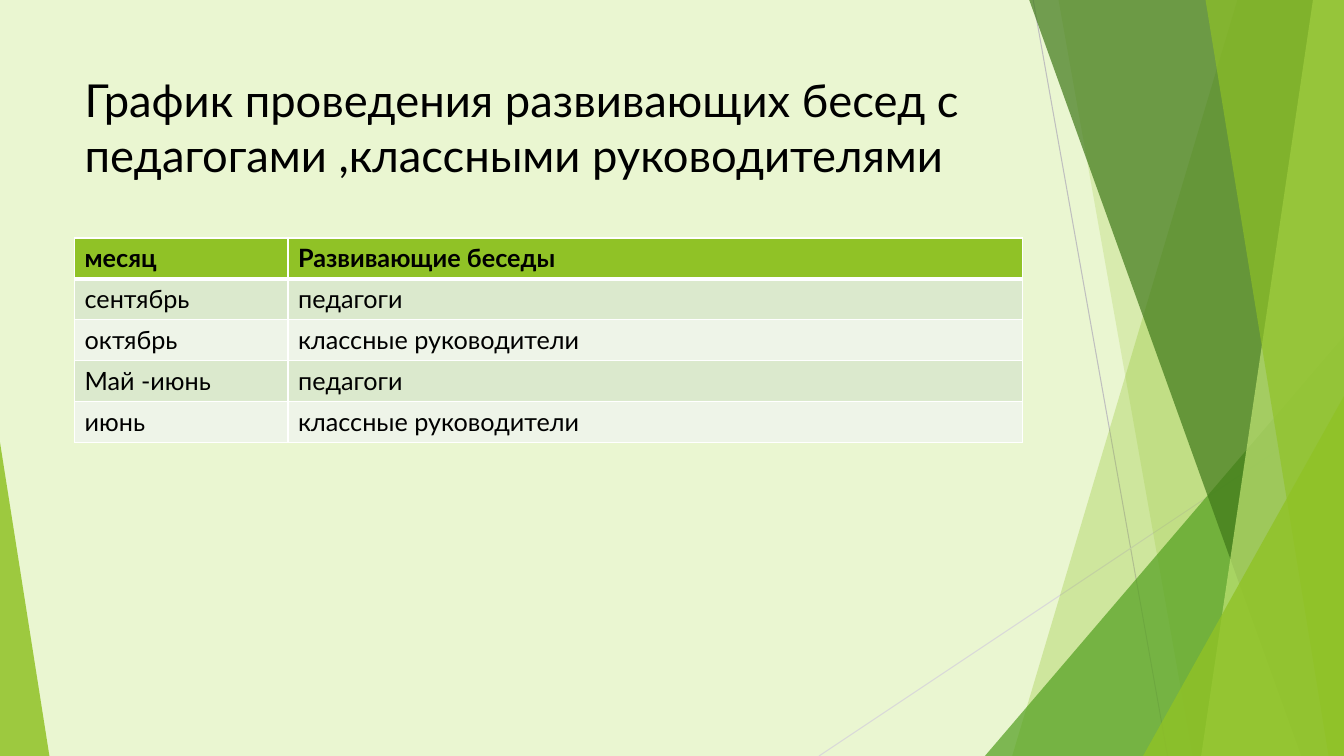
from lxml.etree import SubElement
from pptx import Presentation
from pptx.dml.color import RGBColor
from pptx.enum.shapes import MSO_CONNECTOR, MSO_SHAPE
from pptx.enum.text import MSO_ANCHOR, MSO_AUTO_SIZE, PP_ALIGN
from pptx.oxml import parse_xml
from pptx.oxml.ns import nsdecls, qn
from pptx.util import Pt

WIDTH, HEIGHT = 960, 540
FONT = "Lato"
COLORS = {
    "background": "EAF6D1", "text": "000000", "border": "FFFFFF",
    "gray": "BFBFBF", "light_gray": "D9D9D9",
    "lime": "90C226", "pale_lime": "C0E474", "green": "54A021", "dark_green": "3F7819",
    "odd_row": "DBE9CD", "even_row": "EEF4E8",
}
LEFT, CONTENT_WIDTH = 53.3, 677
MONTH_WIDTH, ROW_HEIGHT = 152.5, 29.2

TITLE = "График проведения развивающих бесед с педагогами ,классными руководителями"
SCHEDULE = [
    ("месяц", "Развивающие беседы"),
    ("сентябрь", "педагоги"),
    ("октябрь", "классные руководители"),
    ("Май -июнь", "педагоги"),
    ("июнь", "классные руководители"),
]
# top x, bottom x, colour, opacity in percent; each reaches the right slide edge
BANDS_BEHIND = [(884, 723, "lime", 30), (756, 852, "lime", 20)]
BANDS_FRONT = [
    (735, 929.5, "dark_green", 70),
    (938, 858, "pale_lime", 70),
    (861, 949, "lime", 65),
]


def rgb(name):
    return RGBColor.from_string(COLORS[name])


def fill_translucent(sp, color, opacity):
    sp.shadow.inherit = False
    sp.line.fill.background()
    sp.fill.solid()
    sp.fill.fore_color.rgb = rgb(color)
    srgb = sp.fill._xPr.find(qn("a:solidFill")).find(qn("a:srgbClr"))
    SubElement(srgb, qn("a:alpha"), val=str(opacity * 1000))


def add_line(slide, start, end, color):
    line = slide.shapes.add_connector(
        MSO_CONNECTOR.STRAIGHT, *(Pt(v) for v in start + end))
    line.line.color.rgb = rgb(color)
    line.line.width = Pt(0.75)
    SubElement(line._element.spPr, qn("a:effectLst"))


def add_band(slide, top_x, bottom_x, color, opacity):
    builder = slide.shapes.build_freeform(Pt(top_x), Pt(-0.6))
    corners = [(WIDTH, -0.6), (WIDTH, HEIGHT), (bottom_x, HEIGHT)]
    builder.add_line_segments([(Pt(x), Pt(y)) for x, y in corners], close=True)
    fill_translucent(builder.convert_to_shape(), color, opacity)


def add_corner(slide, left, top, width, apex, color, opacity):
    """Triangle standing on the bottom edge, apex 0 at left or 1 at right."""
    sp = slide.shapes.add_shape(
        MSO_SHAPE.ISOSCELES_TRIANGLE, Pt(left), Pt(top), Pt(width), Pt(HEIGHT - top))
    sp.adjustments[0] = apex
    fill_translucent(sp, color, opacity)


def format_text(tf, size, bold=False):
    for p in tf.paragraphs:
        p.alignment = PP_ALIGN.LEFT
        for r in p.runs:
            r.font.name = FONT
            r.font.size = Pt(size)
            r.font.bold = bold
            r.font.color.rgb = rgb("text")


def set_title(slide):
    title = slide.shapes.title
    title.left, title.top = Pt(LEFT), Pt(48.2)
    title.width, title.height = Pt(CONTENT_WIDTH), Pt(103.7)
    tf = title.text_frame
    tf.text = TITLE
    tf.word_wrap = True
    tf.auto_size = MSO_AUTO_SIZE.NONE
    tf.vertical_anchor = MSO_ANCHOR.TOP
    format_text(tf, 32.4)
    slide.shapes._spTree.append(title._element)


def set_borders(cell, top, bottom):
    widths = {"lnL": 1, "lnR": 1, "lnT": top, "lnB": bottom}
    tc_pr = cell._tc.get_or_add_tcPr()
    for i, (side, width) in enumerate(widths.items()):
        tc_pr.insert(i, parse_xml(
            f'<a:{side} {nsdecls("a")} w="{Pt(width)}"><a:solidFill>'
            f'<a:srgbClr val="{COLORS["border"]}"/></a:solidFill></a:{side}>'))


def add_schedule(slide):
    rows = len(SCHEDULE)
    table = slide.shapes.add_table(
        rows, 2, Pt(LEFT), Pt(170), Pt(CONTENT_WIDTH), Pt(ROW_HEIGHT * rows)).table
    table.columns[0].width = Pt(MONTH_WIDTH)
    table.columns[1].width = Pt(CONTENT_WIDTH - MONTH_WIDTH)
    for i, texts in enumerate(SCHEDULE):
        table.rows[i].height = Pt(ROW_HEIGHT)
        color = "lime" if i == 0 else "odd_row" if i % 2 else "even_row"
        for j, text in enumerate(texts):
            cell = table.cell(i, j)
            cell.text_frame.text = text
            format_text(cell.text_frame, 18, bold=i == 0)
            cell.fill.solid()
            cell.fill.fore_color.rgb = rgb(color)
            set_borders(cell, top=3 if i == 1 else 1, bottom=3 if i == 0 else 1)


def add_decoration(slide):
    add_line(slide, (738, 0), (834, HEIGHT), "gray")
    add_line(slide, (WIDTH, 290), (585, HEIGHT), "light_gray")
    for band in BANDS_BEHIND:
        add_band(slide, *band)
    add_corner(slide, 703.5, 240, 256.5, 1, "green", 72)
    for band in BANDS_FRONT:
        add_band(slide, *band)
    add_corner(slide, 816.5, 283, 143.5, 1, "lime", 80)
    add_corner(slide, 0, 316, 35.3, 0, "lime", 85)


def main():
    prs = Presentation()
    prs.slide_width, prs.slide_height = Pt(WIDTH), Pt(HEIGHT)
    slide = prs.slides.add_slide(prs.slide_layouts[5])
    slide.background.fill.solid()
    slide.background.fill.fore_color.rgb = rgb("background")
    add_decoration(slide)
    set_title(slide)
    add_schedule(slide)
    prs.save("out.pptx")


if __name__ == "__main__":
    main()
